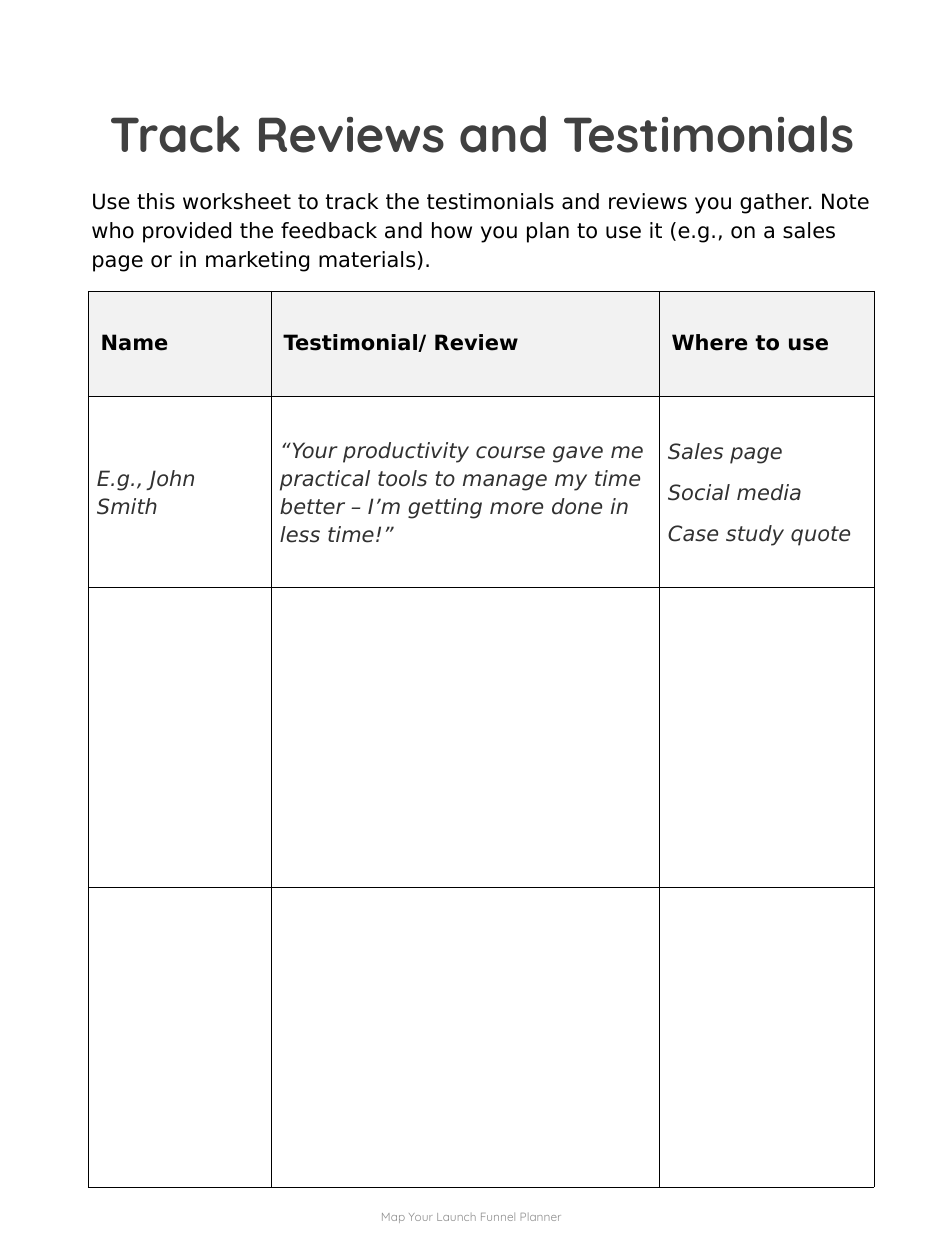
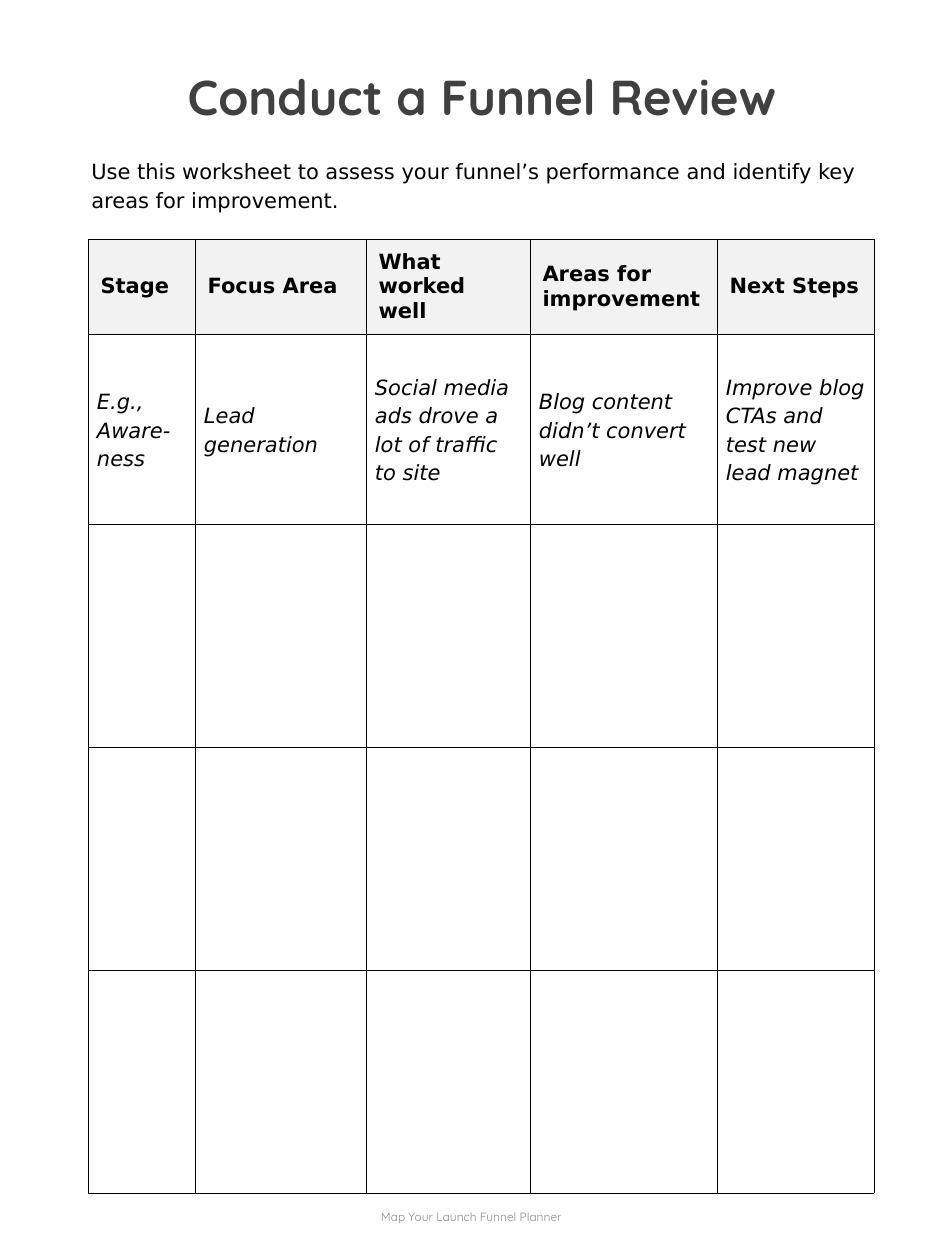
from lxml.etree import SubElement
from pptx import Presentation
from pptx.dml.color import RGBColor
from pptx.enum.shapes import MSO_SHAPE as Preset
from pptx.enum.text import MSO_ANCHOR as Anchor, MSO_AUTO_SIZE as AutoSize, PP_ALIGN as Align
from pptx.oxml.ns import qn
from pptx.util import Pt

PX = 914400 / 126
WHITE = RGBColor(0xFF, 0xFF, 0xFF)
BLACK = RGBColor(0x00, 0x00, 0x00)
TITLE_GREY = RGBColor(0x40, 0x40, 0x40)
EXAMPLE_GREY = RGBColor(0x31, 0x31, 0x31)
FOOTER_GREY = RGBColor(0x8C, 0x8C, 0x8C)
HEADER_FILL = RGBColor(0xF2, 0xF2, 0xF2)
HEADING_FONT, BODY_FONT = "Quicksand", "DejaVu Sans"
FOOTER = "Map Your Launch Funnel Planner"


def px(length):
    """Turn px into EMU."""
    return round(length * PX)


def write(para, text, font, size, color, bold=False, italic=False):
    """Add one styled run to a paragraph."""
    span = para.add_run()
    span.text = text
    span.font.name, span.font.size = font, Pt(size)
    span.font.color.rgb = color
    span.font.bold, span.font.italic = bold, italic


def add_title(page, box, text):
    """Draw the centred page title on a white band."""
    band = page.shapes.add_shape(Preset.RECTANGLE, *map(px, box))
    band.shadow.inherit = False
    band.fill.solid()
    band.fill.fore_color.rgb = WHITE
    band.line.fill.background()
    frame = band.text_frame
    frame.word_wrap, frame.auto_size = True, AutoSize.SHAPE_TO_FIT_TEXT
    frame.vertical_anchor = Anchor.TOP
    para = frame.paragraphs[0]
    para.alignment, para.line_spacing = Align.CENTER, 1.14
    write(para, text, HEADING_FONT, 28, TITLE_GREY, bold=True)


def add_intro(page, box, text):
    """Write the instructions above the table."""
    frame = page.shapes.add_textbox(*map(px, box)).text_frame
    frame.word_wrap, frame.auto_size = True, AutoSize.SHAPE_TO_FIT_TEXT
    para = frame.paragraphs[0]
    para.line_spacing, para.space_after = 1.15, Pt(12)
    write(para, text, BODY_FONT, 12, BLACK)


def add_footer(page, box):
    """Write the planner name at the foot of the page."""
    frame = page.shapes.add_textbox(*map(px, box)).text_frame
    frame.word_wrap, frame.vertical_anchor = True, Anchor.MIDDLE
    para = frame.paragraphs[0]
    para.alignment = Align.CENTER
    write(para, FOOTER, HEADING_FONT, 6.8, FOOTER_GREY)


def add_borders(cell):
    """Draw thin black lines on all sides of a cell."""
    props = cell._tc.get_or_add_tcPr()
    for side in ("a:lnL", "a:lnR", "a:lnT", "a:lnB"):
        line = SubElement(props, qn(side), w=str(Pt(0.25)))
        fill = SubElement(line, qn("a:solidFill"))
        SubElement(fill, qn("a:srgbClr"), val=str(BLACK))


def fill_header(cell, text):
    """Write a bold column heading on a grey ground."""
    cell.fill.solid()
    cell.fill.fore_color.rgb = HEADER_FILL
    write(cell.text_frame.paragraphs[0], text, BODY_FONT, 12, BLACK, bold=True)


def fill_example(cell, lines, color):
    """Write the italic sample entry, one paragraph a line."""
    cell.margin_left = cell.margin_right = px(9)
    cell.margin_top = cell.margin_bottom = 0
    frame = cell.text_frame
    for index, text in enumerate(lines):
        para = frame.add_paragraph() if index else frame.paragraphs[0]
        para.line_spacing = 1.15
        para.space_before = Pt(1.1 if index else 0)
        para.space_after = Pt(6 if len(lines) > 1 else 12)
        write(para, text, BODY_FONT, 12, color, italic=True)


def add_worksheet(page, left, top, widths, heights, headers, examples, color):
    """Draw the table: headings, a sample row and blank rows to fill in."""
    box = (left, top, sum(widths), sum(heights))
    grid = page.shapes.add_table(len(heights), len(widths), *map(px, box)).table
    grid.horz_banding = grid.first_row = False
    for column, width in zip(grid.columns, widths):
        column.width = px(width)
    for row, height in zip(grid.rows, heights):
        row.height = px(height)
    for cell in grid.iter_cells():
        add_borders(cell)
        cell.fill.background()
        cell.vertical_anchor = Anchor.MIDDLE
    for index, (header, lines) in enumerate(zip(headers, examples)):
        fill_header(grid.cell(0, index), header)
        fill_example(grid.cell(1, index), lines, color)


def add_page(deck, title, title_top, intro, intro_box, **worksheet):
    """Build one worksheet page."""
    page = deck.slides.add_slide(deck.slide_layouts[6])
    add_title(page, (72, title_top, 820, 74), title)
    add_intro(page, intro_box, intro)
    add_footer(page, (312, 1183, 319, 67))
    add_worksheet(page, 88, **worksheet)


def main():
    """Build and save the deck."""
    deck = Presentation()
    deck.slide_width, deck.slide_height = px(945), px(1260)
    add_page(
        deck, "Track Reviews and Testimonials", 89,
        "Use this worksheet to track the testimonials and reviews you gather. "
        "Note who provided the feedback and how you plan to use it "
        "(e.g., on a sales page or in marketing materials).",
        (79, 179, 805, 97),
        top=291, widths=[183, 388, 215], heights=[105, 191] + [300] * 2,
        headers=["Name", "Testimonial/ Review", "Where to use"],
        examples=[
            ["E.g., John Smith"],
            ["“Your productivity course gave me practical tools to manage my "
             "time better – I’m getting more done in less time!”"],
            ["Sales page", "Social media", "Case study quote"],
        ],
        color=EXAMPLE_GREY,
    )
    add_page(
        deck, "Conduct a Funnel Review", 52,
        "Use this worksheet to assess your funnel’s performance and identify "
        "key areas for improvement.",
        (79, 149, 805, 68),
        top=239, widths=[107, 171, 164, 187, 157], heights=[95, 190] + [223] * 3,
        headers=["Stage", "Focus Area", "What worked well",
                 "Areas for improvement", "Next Steps"],
        examples=[
            ["E.g., Aware-ness"],
            ["Lead generation"],
            ["Social media ads drove a lot of traffic to site"],
            ["Blog content didn’t convert well"],
            ["Improve blog CTAs and test new lead magnet"],
        ],
        color=BLACK,
    )
    deck.save("out.pptx")


if __name__ == "__main__":
    main()
